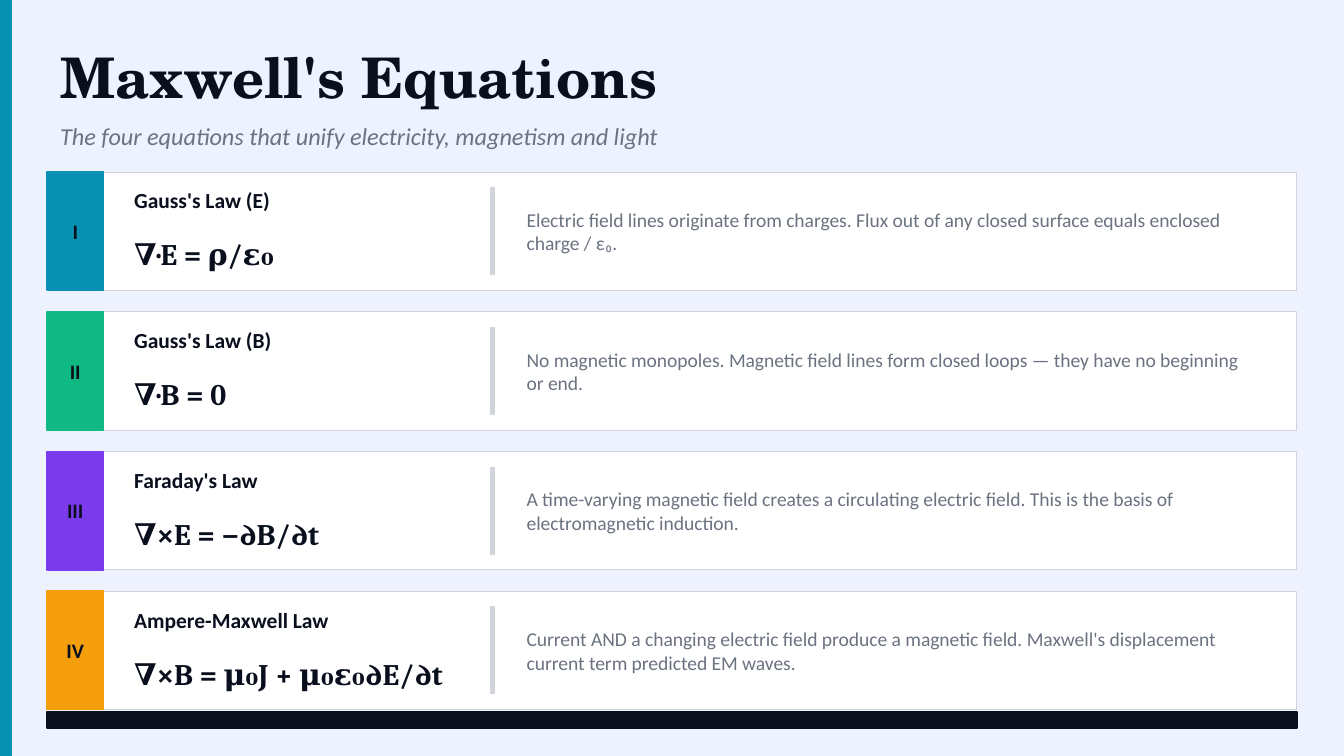
from dataclasses import dataclass

from pptx import Presentation
from pptx import util as u
from pptx.dml.color import RGBColor
from pptx.enum import shapes, text

INK, MUTED, RULE, TEAL = "0A0F1E", "6B7280", "D1D5DB", "0891B2"
SLIDE_W = 10
SLIDE_H = SLIDE_W * 9 / 16
LEFT, WIDTH = 0.35, 9.3
TOP, ROW_H, PITCH = 1.28, 0.88, 1.04


@dataclass
class Equation:
    numeral: str
    color: str
    name: str
    formula: str
    meaning: str


@dataclass
class Style:
    size: float
    font: str = "Calibri"
    color: str = INK
    bold: bool = False
    italic: bool = False


TITLE = Style(30, "TeX Gyre Schola", bold=True)
SUBTITLE = Style(13, color=MUTED, italic=True)
NUMERAL = Style(11, bold=True)
NAME = Style(11.5, bold=True)
FORMULA = Style(16, "Cambria", bold=True)
MEANING = Style(10.5, color=MUTED)

EQUATIONS = [
    Equation("I", TEAL, "Gauss's Law (E)", "∇·E = ρ/ε₀",
             "Electric field lines originate from charges. Flux out of any "
             "closed surface equals enclosed charge / ε₀."),
    Equation("II", "10B981", "Gauss's Law (B)", "∇·B = 0",
             "No magnetic monopoles. Magnetic field lines form closed loops "
             "— they have no beginning or end."),
    Equation("III", "7C3AED", "Faraday's Law", "∇×E = −∂B/∂t",
             "A time-varying magnetic field creates a circulating electric "
             "field. This is the basis of electromagnetic induction."),
    Equation("IV", "F59E0B", "Ampere-Maxwell Law", "∇×B = μ₀J + μ₀ε₀∂E/∂t",
             "Current AND a changing electric field produce a magnetic field. "
             "Maxwell's displacement current term predicted EM waves."),
]


def paint(color_format, color: str) -> None:
    color_format.rgb = RGBColor.from_string(color)


def add_rect(s, x: float, y: float, w: float, h: float, fill: str,
             line: str = "", line_width: float = 1) -> None:
    sp = s.shapes.add_shape(shapes.MSO_SHAPE.RECTANGLE,
                            *map(u.Inches, (x, y, w, h)))
    sp.shadow.inherit = False
    sp.fill.solid()
    paint(sp.fill.fore_color, fill)
    paint(sp.line.color, line or fill)
    sp.line.width = u.Pt(line_width)


def add_text(s, x: float, y: float, w: float, h: float, content: str,
             style: Style, centered: bool = False) -> None:
    tf = s.shapes.add_textbox(*map(u.Inches, (x, y, w, h))).text_frame
    tf.word_wrap = True
    tf.vertical_anchor = text.MSO_ANCHOR.MIDDLE
    p = tf.paragraphs[0]
    p.text = content
    if centered:
        tf.margin_left = tf.margin_right = tf.margin_top = tf.margin_bottom = 0
        p.alignment = text.PP_ALIGN.CENTER
    p.font.size = u.Pt(style.size)
    p.font.name = style.font
    p.font.bold = style.bold
    p.font.italic = style.italic
    paint(p.font.color, style.color)


def add_equation(s, y: float, eq: Equation) -> None:
    # Card and numbered tab
    add_rect(s, LEFT, y, WIDTH, ROW_H, "FFFFFF", RULE, 0.5)
    add_rect(s, LEFT, y, 0.42, ROW_H, eq.color)
    add_text(s, LEFT, y, 0.42, ROW_H, eq.numeral, NUMERAL, centered=True)
    # Law, divider and explanation
    add_text(s, 0.9, y + 0.06, 2.4, 0.3, eq.name, NAME)
    add_text(s, 0.9, y + 0.42, 2.6, 0.38, eq.formula, FORMULA)
    add_rect(s, 3.65, y + 0.12, 0.03, 0.64, RULE)
    add_text(s, 3.82, y + 0.1, 5.6, 0.68, eq.meaning, MEANING)


def main() -> None:
    prs = Presentation()
    prs.slide_width, prs.slide_height = u.Inches(SLIDE_W), u.Inches(SLIDE_H)
    s = prs.slides.add_slide(prs.slide_layouts[6])
    s.background.fill.solid()
    paint(s.background.fill.fore_color, "EEF2FF")

    # Side band and heading
    add_rect(s, 0, 0, 0.08, SLIDE_H, TEAL)
    add_text(s, LEFT, 0.26, 9, 0.62, "Maxwell's Equations", TITLE)
    add_text(s, LEFT, 0.86, 9, 0.3,
             "The four equations that unify electricity, magnetism and light",
             SUBTITLE)

    # Equation rows
    for i, eq in enumerate(EQUATIONS):
        add_equation(s, TOP + i * PITCH, eq)

    # Bottom bar
    add_rect(s, LEFT, 5.3, WIDTH, 0.12, INK)
    prs.save("out.pptx")


if __name__ == "__main__":
    main()
